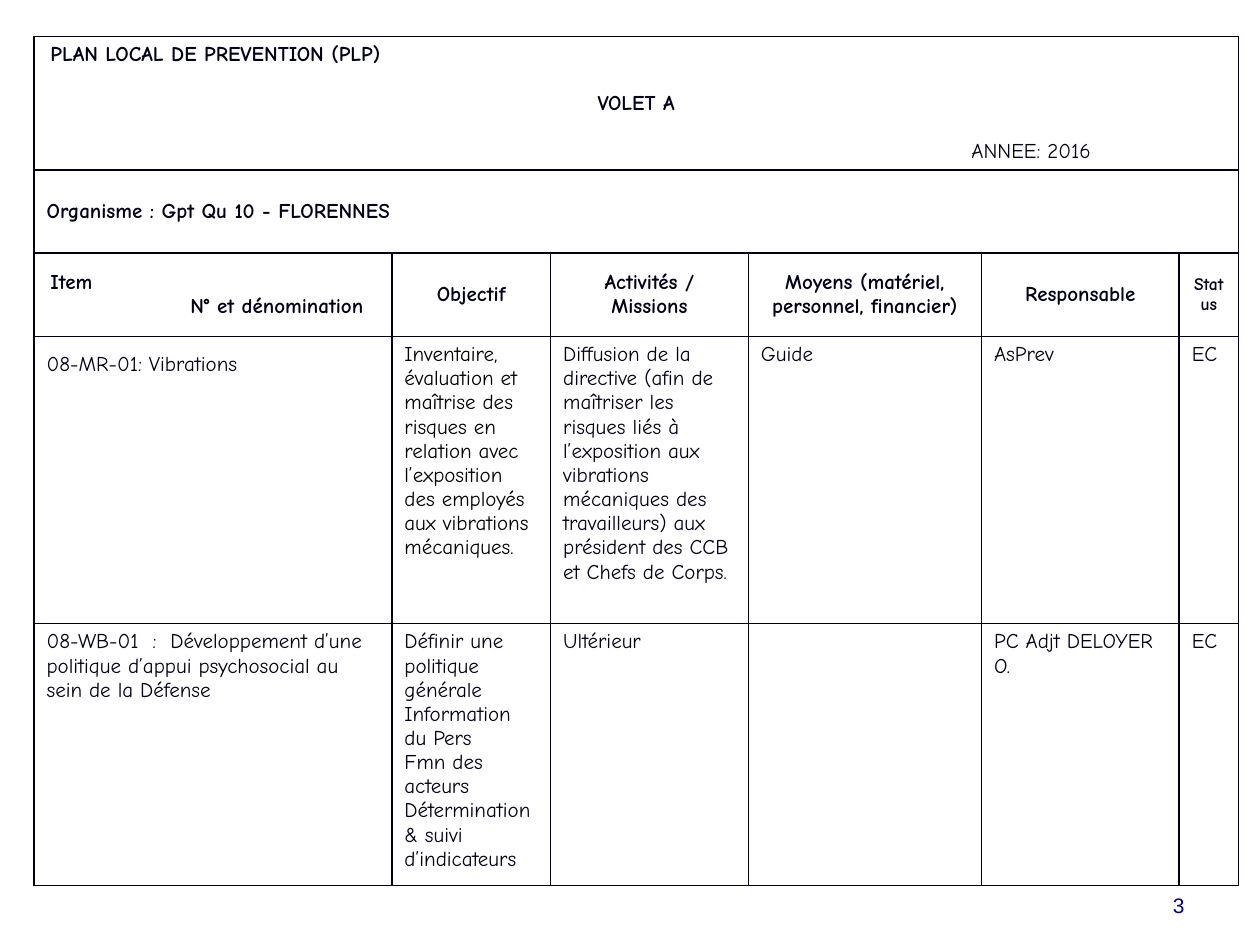
from lxml import etree
from pptx import Presentation
from pptx.dml.color import RGBColor
from pptx.enum import text
from pptx.oxml import ns
from pptx.util import Inches, Pt

INK, BLACK, NAVY = "000018", "000000", "000080"
LEFT, CENTER, RIGHT = text.PP_ALIGN.LEFT, text.PP_ALIGN.CENTER, text.PP_ALIGN.RIGHT
MIDDLE, TOP = text.MSO_ANCHOR.MIDDLE, text.MSO_ANCHOR.TOP
COLS = [2.84, 1.26, 1.57, 1.85, 1.57, 0.47]
ROWS = [1.06, 0.66, 0.66, 2.28, 2.08]
HEADERS = ["Item\nN° et dénomination", "Objectif", "Activités / Missions",
           "Moyens (matériel, personnel, financier)", "Responsable", "Status"]
ITEMS = [
    ["08-MR-01: Vibrations",
     "Inventaire, évaluation et maîtrise des risques en relation avec l’exposition "
     "des employés aux vibrations mécaniques.",
     "Diffusion de la directive (afin de maîtriser les risques liés à l’exposition aux "
     "vibrations mécaniques des travailleurs) aux président des CCB et Chefs de Corps.",
     "Guide", "AsPrev", "EC"],
    ["08-WB-01  :  Développement d’une politique d’appui psychosocial au sein de la Défense",
     "Définir une politique générale Information du Pers\nFmn des acteurs\n"
     "Détermination & suivi d’indicateurs",
     "Ultérieur", "", "PC Adjt DELOYER O.", "EC"],
]


def write(tf, content, align=LEFT, color=INK, size=12, bold=False, font="Comic Neue"):
    tf.text = content
    for p in tf.paragraphs:
        p.alignment = align
        p.font.name, p.font.size, p.font.bold = font, Pt(size), bold
        p.font.color.rgb = RGBColor.from_string(color)
        for r in p.runs:
            r.font.name, r.font.size, r.font.bold = font, Pt(size), bold
            r.font.color.rgb = RGBColor.from_string(color)


def outline(cell):
    """Give a cell a thin line on each side and no fill."""
    tcPr = cell._tc.get_or_add_tcPr()
    for side in ("a:lnL", "a:lnR", "a:lnT", "a:lnB"):
        ln = etree.SubElement(tcPr, ns.qn(side), w=str(Pt(1)))
        fill = etree.SubElement(ln, ns.qn("a:solidFill"))
        etree.SubElement(fill, ns.qn("a:srgbClr"), val=INK)
    cell.fill.background()


prs = Presentation()
prs.slide_width, prs.slide_height = Inches(10), Inches(7.5)
s = prs.slides.add_slide(prs.slide_layouts[6])

table = s.shapes.add_table(len(ROWS), len(COLS), Inches(0.27), Inches(0.29),
                           Inches(sum(COLS)), Inches(sum(ROWS))).table
table.first_row = table.horz_banding = False
for column, width in zip(table.columns, COLS):
    column.width = Inches(width)
for row, height in zip(table.rows, ROWS):
    row.height = Inches(height)
    for cell in row.cells:
        outline(cell)

# Plan heading and organisation, each across the whole table
for i in range(2):
    table.cell(i, 0).merge(table.cell(i, len(COLS) - 1))
    table.cell(i, 0).vertical_anchor = MIDDLE
heading = table.cell(0, 0).text_frame
write(heading, "PLAN LOCAL DE PREVENTION (PLP)\nVOLET A\nANNEE: 2016", bold=True)
plan, part, year = heading.paragraphs
part.alignment = CENTER
part.space_before = year.space_before = Pt(13.8)
year.font.bold = year.runs[0].font.bold = False
plan._p.get_or_add_pPr().set("marL", str(Inches(0.03)))
year._p.get_or_add_pPr().set("marL", str(Inches(7.34)))
write(table.cell(1, 0).text_frame, "Organisme : Gpt Qu 10 - FLORENNES", bold=True)

# Column headers
for j, header in enumerate(HEADERS):
    cell = table.cell(2, j)
    cell.vertical_anchor = MIDDLE
    write(cell.text_frame, header, LEFT if j == 0 else CENTER,
          size=10 if header == "Status" else 12, bold=True)
item, number = table.cell(2, 0).text_frame.paragraphs
item._p.get_or_add_pPr().set("marL", str(Inches(0.03)))
number._p.get_or_add_pPr().set("marL", str(Inches(1.14)))

# Plan items
for i, values in enumerate(ITEMS, start=3):
    for j, value in enumerate(values):
        cell = table.cell(i, j)
        cell.vertical_anchor = TOP
        write(cell.text_frame, value, color=BLACK if (i, j) == (3, 1) else INK)
table.cell(3, 0).margin_top = Inches(0.13)

# Page number
tf = s.shapes.add_textbox(Inches(7.17), Inches(6.83), Inches(2.33), Inches(0.5)).text_frame
tf.word_wrap = True
tf.vertical_anchor = text.MSO_ANCHOR.BOTTOM
write(tf, "3", RIGHT, NAVY, font="Arial")

prs.save("out.pptx")
